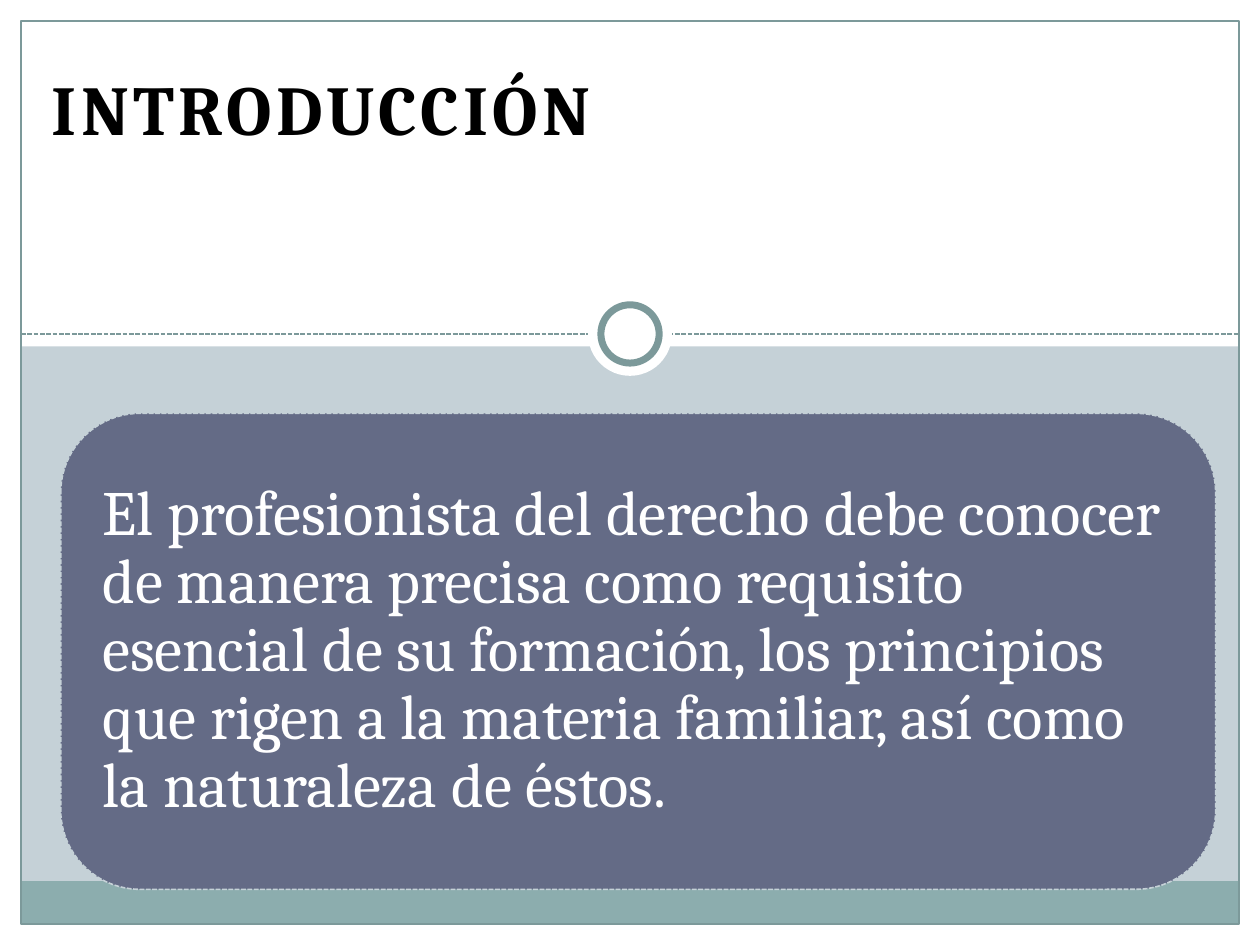
from dataclasses import dataclass

from lxml.etree import SubElement
from pptx import Presentation
from pptx.dml.color import RGBColor as Color
from pptx.enum.dml import MSO_LINE as Dash
from pptx.enum.shapes import MSO_CONNECTOR as Conn, MSO_SHAPE as Kind
from pptx.enum.text import MSO_ANCHOR as Anchor, PP_ALIGN as Align
from pptx.oxml.ns import qn
from pptx.util import Pt


@dataclass(frozen=True)
class Theme:
    font: str = "Cambria"
    white: str = "FFFFFF"
    black: str = "000000"
    back: str = "C5D1D7"
    foot: str = "8CADAE"
    edge: str = "7C999A"
    panel: str = "646B86"
    title: int = 40
    body: int = 36


class Deck:
    def __init__(self, theme, wide, high):
        self.theme = theme
        self.file = Presentation()
        self.file.slide_width, self.file.slide_height = Pt(wide), Pt(high)
        self.slide = self.file.slides.add_slide(self.file.slide_layouts[6])
        fill = self.slide.background.fill
        fill.solid()
        fill.fore_color.rgb = Color.from_string(theme.back)

    def stroke(self, line, color, width, dash=None):
        line.color.rgb = Color.from_string(color)
        line.width = Pt(width)
        if dash:
            line.dash_style = dash

    def shape(self, kind, box, fill=None, line=None):
        item = self.slide.shapes.add_shape(kind, *map(Pt, box))
        item.shadow.inherit = False
        if fill:
            item.fill.solid()
            item.fill.fore_color.rgb = Color.from_string(fill)
        else:
            item.fill.background()
        if line:
            self.stroke(item.line, *line)
        else:
            item.line.fill.background()
        return item

    def rule(self, x1, y1, x2, y2, *line):
        item = self.slide.shapes.add_connector(
            Conn.STRAIGHT, *map(Pt, (x1, y1, x2, y2)))
        self.stroke(item.line, *line)
        SubElement(item._element.spPr, qn("a:effectLst"))

    def text(self, box, words, size, color, bold=False, inset=None,
             anchor=Anchor.TOP, track=None):
        frame = self.slide.shapes.add_textbox(*map(Pt, box)).text_frame
        frame.word_wrap = True
        frame.vertical_anchor = anchor
        if inset is not None:
            frame.margin_left = frame.margin_right = Pt(inset)
            frame.margin_top = frame.margin_bottom = Pt(inset)
        para = frame.paragraphs[0]
        run = para.add_run()
        run.text = words
        font = para.font
        font.name, font.size, font.bold = self.theme.font, Pt(size), bold
        font.color.rgb = Color.from_string(color)
        if track:
            run.font._element.set("spc", str(int(track * 100)))
        return para


def main():
    look = Theme()
    wide, high, rim = 720, 540, 12
    deck = Deck(look, wide, high)

    # White frame and header
    for box in ((0, high - rim, wide, rim), (wide - rim, 0, rim, high),
                (0, 0, rim, high), (0, 0, wide, 198)):
        deck.shape(Kind.RECTANGLE, box, look.white)

    # Footer band, divider and border
    deck.shape(Kind.RECTANGLE, (rim, 503.5, wide - 2 * rim, 24.5), look.foot)
    deck.rule(rim, 190.8, wide - rim, 190.8, look.edge, 0.9, Dash.SQUARE_DOT)
    deck.shape(Kind.RECTANGLE, (rim, rim, wide - 2 * rim, high - 2 * rim),
               line=(look.edge, 0.75))

    # Ring on the divider
    for size, line in ((48, None), (33.3, (look.edge, 4))):
        box = ((wide - size) / 2, 190.8 - size / 2, size, size)
        deck.shape(Kind.OVAL, box, look.white, line)

    # Title
    head = deck.text((22.5, 34, 418, 88.5), "INTRODUCCIÓN", look.title,
                     look.black, bold=True, track=2.5)
    head.alignment = Align.JUSTIFY

    # Panel with its statement
    deck.shape(Kind.ROUNDED_RECTANGLE, (34.7, 236.2, 660, 272), look.panel,
               (look.back, 0.9, Dash.SQUARE_DOT))
    body = deck.text(
        (47.8, 249.4, 633.6, 245.5),
        "El profesionista del derecho debe conocer de manera precisa como "
        "requisito esencial de su formación, los principios que rigen a la "
        "materia familiar, así como la naturaleza de éstos.",
        look.body, look.white, inset=10.8, anchor=Anchor.MIDDLE)
    body.line_spacing = 0.9

    deck.file.save("out.pptx")


if __name__ == "__main__":
    main()
